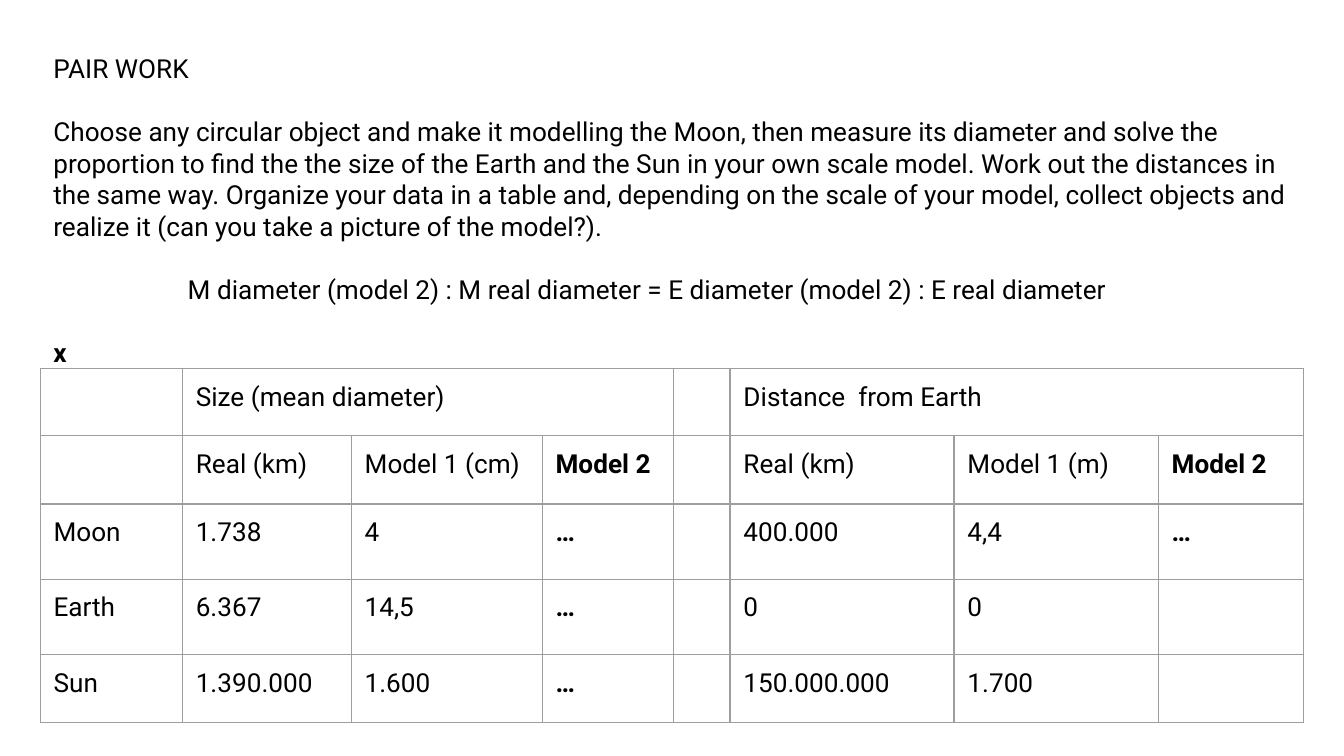
import pptx
import pptx.dml.color
import pptx.enum.text
import pptx.oxml
import pptx.oxml.ns
import pptx.util

Pt = pptx.util.Pt
BLACK = pptx.dml.color.RGBColor(0x00, 0x00, 0x00)
GREY = pptx.dml.color.RGBColor(0x9E, 0x9E, 0x9E)
FONT = "Roboto"
SIZE = 14
INSET = 7.2

TASK = (
    "Choose any circular object and make it modelling the Moon, then measure "
    "its diameter and solve the proportion to find the the size of the Earth "
    "and the Sun in your own scale model. Work out the distances in the same "
    "way. Organize your data in a table and, depending on the scale of your "
    "model, collect objects and realize it (can you take a picture of the "
    "model?)."
)
RATIO = (
    "M diameter (model 2) : M real diameter = "
    "E diameter (model 2) : E real diameter"
)

WIDTHS = [76.2, 90.5, 102.3, 70.4, 30.3, 120, 109.4, 77.7]
HEIGHTS = [36, 36.7, 40.3, 40.3, 36.7]
ROWS = [
    ["", "Size (mean diameter)", "", "", "", "Distance  from Earth", "", ""],
    ["", "Real (km)", "Model 1 (cm)", "Model 2",
     "", "Real (km)", "Model 1 (m)", "Model 2"],
    ["Moon", "1.738", "4", "…", "", "400.000", "4,4", "…"],
    ["Earth", "6.367", "14,5", "…", "", "0", "0", ""],
    ["Sun", "1.390.000", "1.600", "…", "", "150.000.000", "1.700", ""],
]
SPANS = [(1, 3), (5, 7)]
BOLD = (3, 7)


def style(par, bold=False):
    for run in par.runs:
        run.font.name = FONT
        run.font.size = Pt(SIZE)
        run.font.bold = bold
        run.font.color.rgb = BLACK


def pad(item):
    """Set equal insets on a text frame or a cell."""
    item.margin_left = item.margin_right = Pt(INSET)
    item.margin_top = item.margin_bottom = Pt(INSET)


def add_border(cell):
    props = cell._tc.get_or_add_tcPr()
    for spot, side in enumerate(("lnL", "lnR", "lnT", "lnB")):
        line = pptx.oxml.parse_xml(
            f'<a:{side} {pptx.oxml.ns.nsdecls("a")} w="{Pt(0.75)}">'
            f'<a:solidFill><a:srgbClr val="{GREY}"/></a:solidFill>'
            f'</a:{side}>'
        )
        props.insert(spot, line)


def add_task(slide, left, top, width, height):
    box = slide.shapes.add_textbox(Pt(left), Pt(top), Pt(width), Pt(height))
    frame = box.text_frame
    frame.word_wrap = True
    frame.auto_size = pptx.enum.text.MSO_AUTO_SIZE.SHAPE_TO_FIT_TEXT
    pad(frame)
    frame.text = "\n".join(["PAIR WORK", TASK, RATIO, "x"])
    head, *rest = frame.paragraphs
    style(head)
    for par in rest:
        par.space_before = Pt(17)
        style(par, bold=par.text == "x")
    indent = rest[1]._p.get_or_add_pPr()
    indent.set("marL", str(Pt(36)))
    indent.set("indent", str(Pt(36)))


def add_data(slide, left, top):
    table = slide.shapes.add_table(
        len(HEIGHTS), len(WIDTHS), Pt(left), Pt(top),
        Pt(sum(WIDTHS)), Pt(sum(HEIGHTS)),
    ).table
    table.first_row = False
    table.horz_banding = False
    for col, width in zip(table.columns, WIDTHS):
        col.width = Pt(width)
    for row, height in zip(table.rows, HEIGHTS):
        row.height = Pt(height)
    for first, last in SPANS:
        table.cell(0, first).merge(table.cell(0, last))
    for r, row in enumerate(ROWS):
        for c, text in enumerate(row):
            cell = table.cell(r, c)
            cell.fill.background()
            add_border(cell)
            if text:
                pad(cell)
                cell.text_frame.text = text
                style(cell.text_frame.paragraphs[0], bold=c in BOLD)


def main():
    deck = pptx.Presentation()
    deck.slide_width = Pt(720)
    deck.slide_height = Pt(405)
    slide = deck.slides.add_slide(deck.slide_layouts[6])
    add_data(slide, 21.5, 197.3)
    add_task(slide, 21.5, 21, 677, 167)
    deck.save("out.pptx")


if __name__ == "__main__":
    main()
